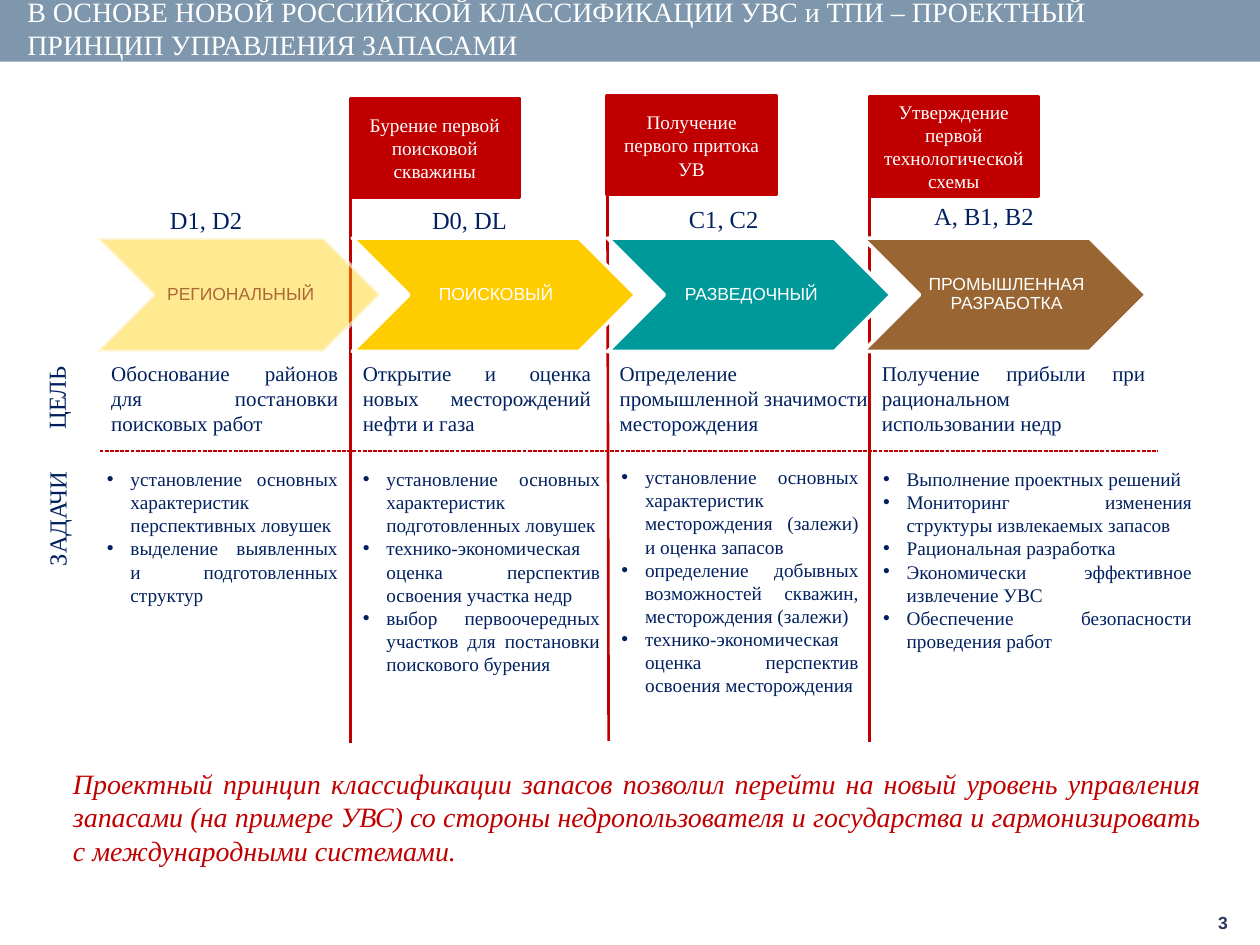
import pptx
import pptx.util
import pptx.dml.color
import pptx.enum.dml
import pptx.enum.shapes
import pptx.enum.text
import pptx.oxml
import pptx.oxml.ns
from lxml import etree

Pt = pptx.util.Pt
ALIGN = pptx.enum.text.PP_ALIGN
SHAPE = pptx.enum.shapes.MSO_SHAPE
qn = pptx.oxml.ns.qn

SERIF, SANS = "Times New Roman", "Arial"
RED, NAVY, WHITE, YELLOW = "C00000", "002060", "FFFFFF", "FFCC00"
INSETS = (7.2, 3.6, 7.2, 3.6)

# Each stage: name, chevron fill, name colour, opacity in %
STAGES = [
    ("РЕГИОНАЛЬНЫЙ", YELLOW, "AA6837", 43),
    ("ПОИСКОВЫЙ", YELLOW, WHITE, 100),
    ("РАЗВЕДОЧНЫЙ", "009999", WHITE, 100),
    ("ПРОМЫШЛЕННАЯ РАЗРАБОТКА", "996633", WHITE, 100),
]

# Each milestone: flag text, pole left, flag top, pole foot x
MILESTONES = [
    ("Бурение первой поисковой скважины", 200.2, 56.2, 200.2),
    ("Получение первого притока УВ", 347, 54.7, 347.8),
    ("Утверждение первой технологической схемы", 496.8, 55.4, 496.8),
]

# Each category: text, left, top
CATEGORIES = [
    ("D1, D2", 90, 113.8),
    ("D0, DL", 239.8, 113.8),
    ("C1, C2", 386.6, 113),
    ("A, B1, B2", 526.7, 111.6),
]

# Each goal: text, left, width, alignment
GOALS = [
    ("Обоснование районов для постановки поисковых работ", 56.5, 144, ALIGN.JUSTIFY),
    ("Открытие и оценка новых месторождений нефти и газа", 200.2, 144.7, ALIGN.JUSTIFY),
    ("Определение промышленной значимости месторождения", 347, 160.6, ALIGN.LEFT),
    ("Получение прибыли при рациональном использовании недр", 496.8, 164.9, ALIGN.JUSTIFY),
]

# Each task list: left, top, width, height, items
TASKS = [
    (54, 263.5, 146.2, 87, [
        "установление основных характеристик перспективных ловушек",
        "выделение выявленных и подготовленных структур"]),
    (200.2, 263.5, 149.8, 140, [
        "установление основных характеристик подготовленных ловушек",
        "технико-экономическая оценка перспектив освоения участка недр",
        "выбор первоочередных участков для постановки поискового бурения"]),
    (348, 262.4, 149.8, 140, [
        "установление основных характеристик месторождения (залежи) и оценка запасов",
        "определение добывных возможностей скважин, месторождения (залежи)",
        "технико-экономическая оценка перспектив освоения месторождения"]),
    (497.5, 263.5, 190.8, 127.4, [
        "Выполнение проектных решений",
        "Мониторинг изменения структуры извлекаемых запасов",
        "Рациональная разработка",
        "Экономически эффективное извлечение УВС",
        "Обеспечение безопасности проведения работ"]),
]


def rgb(hex_color):
    return pptx.dml.color.RGBColor.from_string(hex_color)


def set_opacity(fill_parent, percent):
    color = next(fill_parent.iter(qn("a:srgbClr")))
    etree.SubElement(color, qn("a:alpha")).set("val", str(percent * 1000))


def add_bullet(p):
    pPr = p._p.get_or_add_pPr()
    pPr.set("marL", str(Pt(13.5)))
    pPr.set("indent", str(-Pt(13.5)))
    etree.SubElement(pPr, qn("a:buFont")).set("typeface", SANS)
    etree.SubElement(pPr, qn("a:buChar")).set("char", "•")


def write(s, texts, size, color, font=SERIF, align=ALIGN.LEFT, middle=False,
          insets=INSETS, spacing=None, bullets=False, bold=False, italic=False):
    tf = s.text_frame
    tf.word_wrap = True
    anchor = pptx.enum.text.MSO_ANCHOR
    tf.vertical_anchor = anchor.MIDDLE if middle else anchor.TOP
    tf.margin_left, tf.margin_top, tf.margin_right, tf.margin_bottom = map(Pt, insets)
    for i, text in enumerate(texts):
        p = tf.add_paragraph() if i else tf.paragraphs[0]
        if bullets:
            add_bullet(p)
        p.alignment = align
        if spacing:
            p.line_spacing = spacing
        r = p.add_run()
        r.text = text
        r.font.name, r.font.size = font, Pt(size)
        r.font.bold, r.font.italic = bold, italic
        r.font.color.rgb = rgb(color)


def add_text(slide, box, texts, size, color, rotation=0, **style):
    s = slide.shapes.add_textbox(*map(Pt, box))
    s.rotation = rotation
    write(s, texts, size, color, **style)


def add_block(slide, kind, box, fill, line=None):
    s = slide.shapes.add_shape(kind, *map(Pt, box))
    s.shadow.inherit = False
    s.fill.solid()
    s.fill.fore_color.rgb = rgb(fill)
    if line:
        s.line.color.rgb = rgb(line)
        s.line.width = Pt(2.08)
    else:
        s.line.fill.background()
    return s


def add_line(slide, start, end, width, dash=None):
    s = slide.shapes.add_connector(pptx.enum.shapes.MSO_CONNECTOR.STRAIGHT,
                                   *map(Pt, start + end))
    s.line.color.rgb = rgb(RED)
    s.line.width = Pt(width)
    if dash:
        s.line.dash_style = dash
    etree.SubElement(s._element.spPr, qn("a:effectLst"))


def add_stage(slide, index, name, fill, color, opacity):
    left, top, height = 55.4 + 145.9 * index, 136.1, 64.8
    s = add_block(slide, SHAPE.CHEVRON, (left, top, 162, height), fill, WHITE)
    if opacity < 100:
        set_opacity(s._element.spPr.find(qn("a:solidFill")), opacity)
        set_opacity(s._element.spPr.find(qn("a:ln")), 59)
    add_text(slide, (left + height / 2, top, 97.2, height), [name], 10, color,
             font=SANS, align=ALIGN.CENTER, middle=True,
             insets=(2.9, 0.7, 0.7, 0.7), spacing=0.9)


def main():
    prs = pptx.Presentation()
    prs.slide_width, prs.slide_height = Pt(720), Pt(540)
    slide = prs.slides.add_slide(prs.slide_layouts[6])

    # Header band, milestone poles and title
    add_block(slide, SHAPE.RECTANGLE, (0, 0, 720, 35.3), "7E97AD")
    for text, left, top, foot in MILESTONES:
        add_line(slide, (left, top), (foot, top + 368.6), 1.5)
    add_text(slide, (8.6, 0, 653, 31.7),
             ["В ОСНОВЕ НОВОЙ РОССИЙСКОЙ КЛАССИФИКАЦИИ УВС и ТПИ – "
              "ПРОЕКТНЫЙ ПРИНЦИП УПРАВЛЕНИЯ ЗАПАСАМИ"], 16, WHITE, middle=True)

    # Chain of stages
    for i, stage in enumerate(STAGES):
        add_stage(slide, i, *stage)

    # Milestone flags and resource categories
    for text, left, top, foot in MILESTONES:
        s = add_block(slide, SHAPE.RECTANGLE, (left, top, 96.5, 56.5), RED, RED)
        write(s, [text], 11, WHITE, align=ALIGN.CENTER, middle=True)
    for text, left, top in CATEGORIES:
        add_text(slide, (left, top, 72, 24.5), [text], 14, NAVY)

    # Goals
    add_text(slide, (-2.2, 224.6, 69.1, 24.5), ["ЦЕЛЬ"], 14, NAVY,
             rotation=270, align=ALIGN.RIGHT)
    for text, left, width, align in GOALS:
        add_text(slide, (left, 202.3, width, 51.1), [text], 12, NAVY, align=align)
    add_line(slide, (56.9, 257.8), (661.7, 257.8), 0.75,
             pptx.enum.dml.MSO_LINE.SQUARE_DOT)

    # Tasks
    add_text(slide, (-44.6, 327.6, 154.8, 24.5), ["ЗАДАЧИ"], 14, NAVY,
             rotation=270, align=ALIGN.RIGHT)
    for *box, items in TASKS:
        add_text(slide, box, items, 11, NAVY, align=ALIGN.JUSTIFY, bullets=True)

    # Conclusion and page number
    add_text(slide, (34.6, 434.2, 658.8, 65.5),
             ["Проектный принцип классификации запасов позволил перейти на новый "
              "уровень управления запасами (на примере УВС) со стороны "
              "недропользователя и государства и гармонизировать с "
              "международными системами."],
             16, RED, align=ALIGN.JUSTIFY, italic=True)
    add_text(slide, (689, 514.1, 30.2, 25.9), ["3"], 10, "283659",
             font=SANS, middle=True, bold=True)

    prs.save("out.pptx")


if __name__ == "__main__":
    main()
